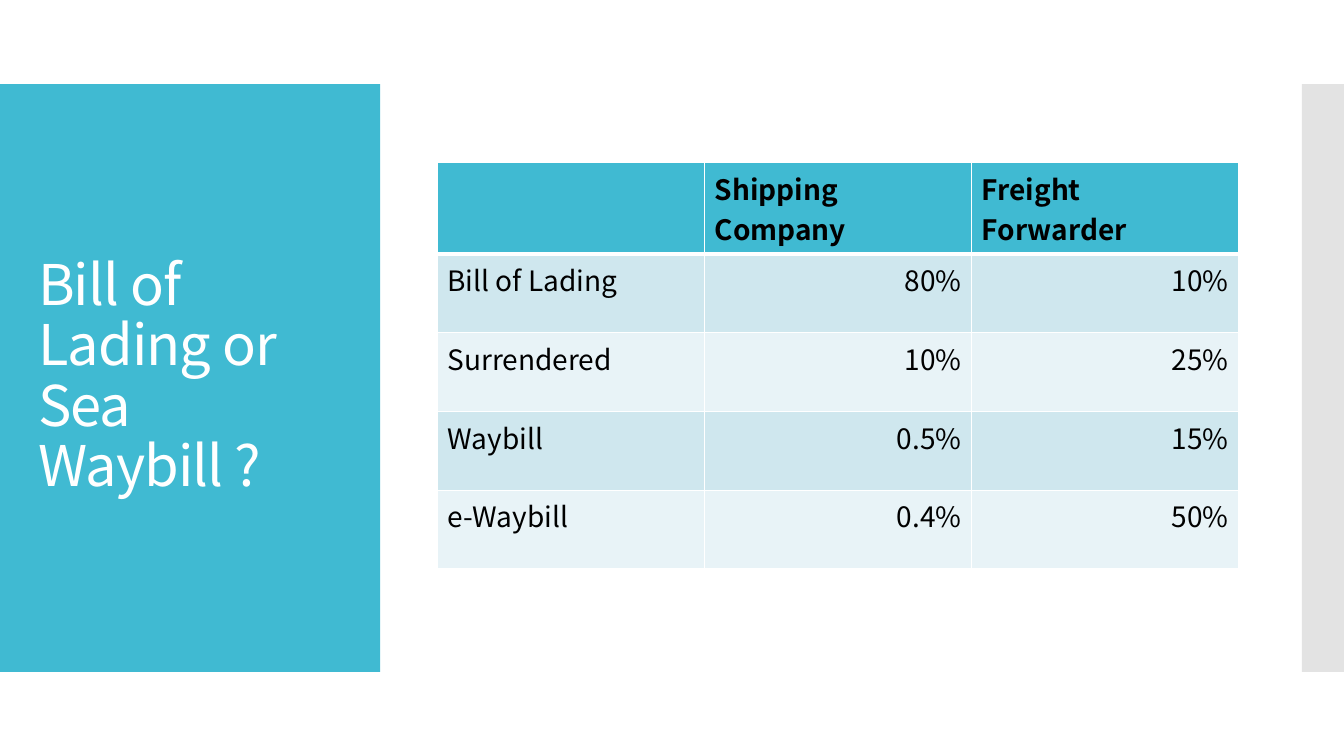
from lxml import etree
from pptx import Presentation
from pptx.dml.color import RGBColor
from pptx.enum.shapes import MSO_SHAPE
from pptx.enum.text import MSO_ANCHOR, PP_ALIGN
from pptx.oxml.ns import qn
from pptx.util import Pt

RECTANGLE = MSO_SHAPE.RECTANGLE
MIDDLE = MSO_ANCHOR.MIDDLE
LEFT, RIGHT = PP_ALIGN.LEFT, PP_ALIGN.RIGHT
TITLE_ONLY = 5

FONT = "Noto Sans CJK JP"
TEAL, GREY, WHITE, BLACK = "40BAD2", "C8C8C8", "FFFFFF", "000000"
BANDS = ("CFE7EE", "E8F3F7")

TITLE = "Bill of Lading or Sea Waybill ?"
ROWS = [
    ("", "Shipping Company", "Freight Forwarder"),
    ("Bill of Lading", "80%", "10%"),
    ("Surrendered", "10%", "25%"),
    ("Waybill", "0.5%", "15%"),
    ("e-Waybill", "0.4%", "50%"),
]


def paint(fill, color):
    fill.solid()
    fill.fore_color.rgb = RGBColor.from_string(color)


def format_para(para, size, color, bold=False, align=LEFT):
    para.alignment = align
    for span in para.runs:
        span.font.name = FONT
        span.font.size = Pt(size)
        span.font.bold = bold
        span.font.color.rgb = RGBColor.from_string(color)


def add_panel(page, box, color, opacity=100):
    panel = page.shapes.add_shape(RECTANGLE, *map(Pt, box))
    panel.shadow.inherit = False
    panel.line.fill.background()
    paint(panel.fill, color)
    if opacity < 100:
        color_node = panel.element.spPr.find(qn("a:solidFill"))[0]
        etree.SubElement(color_node, qn("a:alpha"), val=str(opacity * 1000))


def add_title_panel(page, box):
    add_panel(page, box, TEAL)
    left, top, width, height = box
    title = page.shapes.title
    # The title placeholder comes first in the tree, so lift it above the panel.
    title.element.getparent().append(title.element)
    title.left, title.top = Pt(left + 20), Pt(top + 29)
    title.width, title.height = Pt(width - 39.5), Pt(height - 58)
    frame = title.text_frame
    frame.text = TITLE
    frame.word_wrap = True
    frame.vertical_anchor = MIDDLE
    para = frame.paragraphs[0]
    para.line_spacing = 0.9
    format_para(para, 40, WHITE)
    para.runs[0].font._element.set("spc", "-60")


def add_borders(cell, bottom_width):
    """Draw white borders, which must precede the fill in the cell properties."""
    properties = cell._tc.get_or_add_tcPr()
    widths = {"a:lnL": 1, "a:lnR": 1, "a:lnT": 1, "a:lnB": bottom_width}
    for position, (tag, width) in enumerate(widths.items()):
        line = etree.Element(qn(tag), w=str(Pt(width)))
        fill = etree.SubElement(line, qn("a:solidFill"))
        etree.SubElement(fill, qn("a:srgbClr"), val=WHITE)
        properties.insert(position, line)


def add_share_table(page, box):
    table = page.shapes.add_table(len(ROWS), len(ROWS[0]), *map(Pt, box)).table
    for row_index, row in enumerate(ROWS):
        header = row_index == 0
        for column_index, text in enumerate(row):
            cell = table.cell(row_index, column_index)
            cell.text = text
            align = LEFT if header or column_index == 0 else RIGHT
            format_para(cell.text_frame.paragraphs[0], 20, BLACK, header, align)
            paint(cell.fill, TEAL if header else BANDS[(row_index - 1) % 2])
            add_borders(cell, 3 if header else 1)


def main():
    deck = Presentation()
    deck.slide_width, deck.slide_height = Pt(960), Pt(540)
    page = deck.slides.add_slide(deck.slide_layouts[TITLE_ONLY])
    add_title_panel(page, (0, 60, 271.5, 420))
    add_panel(page, (930, 60, 30, 420), GREY, opacity=50)
    add_share_table(page, (312.5, 116, 572.4, 281.5))
    deck.save("out.pptx")


if __name__ == "__main__":
    main()
